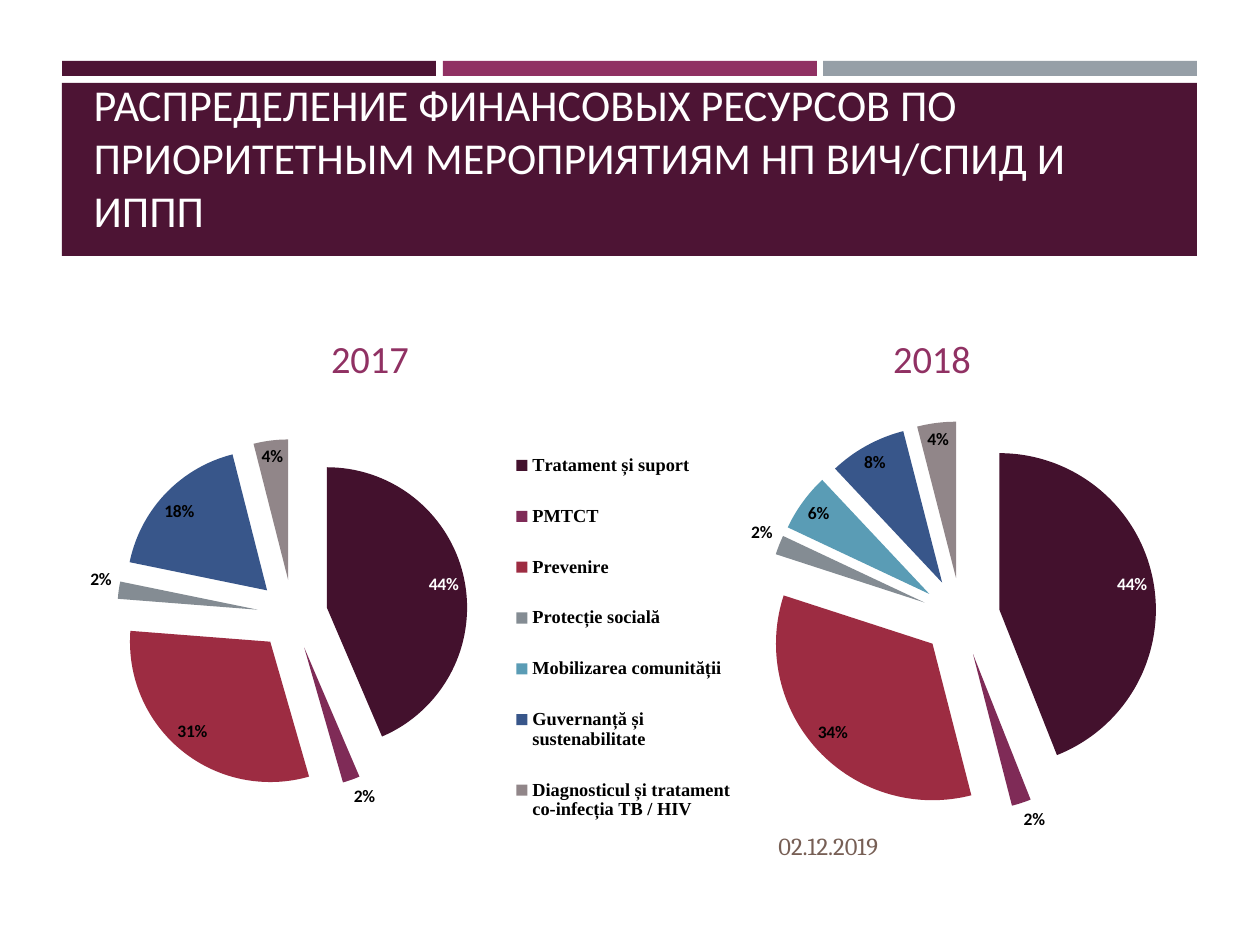
"""Build the slide that compares the 2017 and 2018 funding shares."""
from dataclasses import dataclass
from typing import Optional

import lxml.etree
import pptx
import pptx.chart.data
import pptx.dml.color
import pptx.enum.chart
import pptx.enum.shapes
import pptx.enum.text
import pptx.oxml.ns
import pptx.util

RGBColor = pptx.dml.color.RGBColor
Anchor = pptx.enum.text.MSO_ANCHOR
Align = pptx.enum.text.PP_ALIGN

EMU_PER_PX = 914400 / 126
PLUM = RGBColor(0x4D, 0x14, 0x34)
MAGENTA = RGBColor(0x90, 0x31, 0x63)
SILVER = RGBColor(0x96, 0x9F, 0xA7)
BROWN = RGBColor(0x77, 0x5F, 0x55)
WHITE = RGBColor(0xFF, 0xFF, 0xFF)
BLACK = RGBColor(0x00, 0x00, 0x00)
SLICE_COLORS = (
    RGBColor(0x43, 0x11, 0x2D),
    RGBColor(0x7F, 0x2B, 0x57),
    RGBColor(0x9D, 0x2C, 0x42),
    RGBColor(0x84, 0x8C, 0x93),
    RGBColor(0x5A, 0x9C, 0xB5),
    RGBColor(0x38, 0x56, 0x8A),
    RGBColor(0x91, 0x86, 0x89),
)
EXPLOSION = 25
TITLE = "РАСПРЕДЕЛЕНИЕ ФИНАНСОВЫХ РЕСУРСОВ ПО ПРИОРИТЕТНЫМ МЕРОПРИЯТИЯМ НП ВИЧ/СПИД И ИППП"


@dataclass(frozen=True)
class Box:
    """A rectangle in px."""
    left: int
    top: int
    width: int
    height: int

    def emu(self) -> tuple:
        """Return the four lengths in EMU."""
        return tuple(px(value) for value in (self.left, self.top, self.width, self.height))


@dataclass(frozen=True)
class Band:
    """A filled header rectangle."""
    box: Box
    color: RGBColor


@dataclass(frozen=True)
class Label:
    """A single-run text."""
    text: str
    box: Box
    font: str
    size: float
    color: RGBColor
    anchor: Anchor
    align: Align = Align.LEFT
    space_before: float = 0
    space_after: float = 0


@dataclass(frozen=True)
class Pie:
    """An exploded pie, with layouts as x, y, width and height fractions."""
    box: Box
    categories: tuple
    values: tuple
    plot_layout: tuple
    legend_layout: Optional[tuple] = None


BANDS = (
    Band(Box(62, 61, 374, 15), PLUM),
    Band(Box(443, 61, 374, 15), MAGENTA),
    Band(Box(823, 61, 374, 15), SILVER),
    Band(Box(62, 83, 1135, 173), PLUM),
)
TITLE_LABEL = Label(TITLE, Box(81, 94, 1101, 149), "Calibri", 25.2, WHITE, Anchor.BOTTOM)
LABELS = (
    Label("2017", Box(122, 307, 496, 80), "Calibri", 22, MAGENTA, Anchor.BOTTOM, Align.CENTER, 4.4, 6),
    Label("2018", Box(684, 307, 496, 80), "Calibri", 22, MAGENTA, Anchor.BOTTOM, Align.CENTER, 4.4, 6),
    Label("02.12.2019", Box(766, 820, 294, 51), "Cambria", 14, BROWN, Anchor.MIDDLE),
)
PIES = (
    Pie(
        Box(714, 378, 462, 483),
        ("1", "2", "3", "4", "5", "6", "7"),
        (44, 2, 34, 2, 6, 8, 4),
        (0.11, 0.09, 0.85, 0.81),
    ),
    Pie(
        Box(84, 368, 662, 514),
        (
            "Tratament și suport",
            "PMTCT",
            "Prevenire",
            "Protecție socială",
            "Mobilizarea comunității",
            "Guvernanță și sustenabilitate",
            "Diagnosticul și tratament co-infecția TB / HIV",
        ),
        (44, 2, 31, 2, 0, 18, 4),
        (0.05, 0.06, 0.53, 0.84),
        (0.64, 0.11, 0.35, 0.83),
    ),
)


def px(value: int) -> int:
    """Turn px into EMU."""
    return round(value * EMU_PER_PX)


def chart_element(tag: str, value: object = None) -> lxml.etree.ElementBase:
    """Make a chart element with an optional val attribute."""
    element = pptx.oxml.xmlchemy.OxmlElement(f"c:{tag}")
    if value is not None:
        element.set("val", str(value))
    return element


def manual_layout(fractions: tuple, inner: bool) -> lxml.etree.ElementBase:
    """Make a layout placed by fractions of the chart."""
    layout = chart_element("layout")
    manual = chart_element("manualLayout")
    layout.append(manual)
    if inner:
        manual.append(chart_element("layoutTarget", "inner"))
    for tag in ("xMode", "yMode"):
        manual.append(chart_element(tag, "edge"))
    for tag, fraction in zip("xywh", fractions):
        manual.append(chart_element(tag, fraction))
    return layout


def add_band(slide: pptx.slide.Slide, band: Band) -> None:
    """Draw one header rectangle."""
    shape = slide.shapes.add_shape(pptx.enum.shapes.MSO_SHAPE.RECTANGLE, *band.box.emu())
    shape.shadow.inherit = False
    shape.fill.solid()
    shape.fill.fore_color.rgb = band.color
    shape.line.fill.background()


def write_label(shape: pptx.shapes.autoshape.Shape, label: Label) -> None:
    """Place a text shape and write its run."""
    shape.left, shape.top, shape.width, shape.height = label.box.emu()
    frame = shape.text_frame
    frame.word_wrap = True
    frame.auto_size = pptx.enum.text.MSO_AUTO_SIZE.NONE
    frame.vertical_anchor = label.anchor
    paragraph = frame.paragraphs[0]
    paragraph.alignment = label.align
    paragraph.space_before = pptx.util.Pt(label.space_before)
    paragraph.space_after = pptx.util.Pt(label.space_after)
    run = paragraph.add_run()
    run.text = label.text
    style_font(run.font, label.font, label.size, label.color)


def style_font(font: pptx.text.text.Font, name: str, size: float, color: RGBColor, bold: bool = False) -> None:
    """Set the face, size, colour and weight of a font."""
    font.name = name
    font.size = pptx.util.Pt(size)
    font.color.rgb = color
    font.bold = bold


def add_pie(slide: pptx.slide.Slide, pie: Pie) -> None:
    """Draw one exploded pie with percent labels."""
    data = pptx.chart.data.CategoryChartData()
    data.categories = pie.categories
    data.add_series("Series 1", pie.values)
    chart = slide.shapes.add_chart(pptx.enum.chart.XL_CHART_TYPE.PIE, *pie.box.emu(), data).chart
    chart.has_title = False
    style_font(chart.font, "Calibri", 10, BLACK)
    chart.plots[0].vary_by_categories = True
    series = chart.plots[0].series[0]
    for index, color in enumerate(SLICE_COLORS):
        slice_format = series.points[index].format
        slice_format.fill.solid()
        slice_format.fill.fore_color.rgb = color
        slice_format.line.fill.background()
    series_element = series._element
    series_element.xpath("c:dPt")[0].addprevious(chart_element("explosion", EXPLOSION))
    best_fit = pptx.enum.chart.XL_LABEL_POSITION.BEST_FIT
    labels = series.data_labels
    labels.show_value = False
    labels.show_percentage = True
    labels.number_format = "0%"
    labels.number_format_is_linked = False
    labels.position = best_fit
    style_font(labels.font, "Calibri", 10, BLACK, True)
    first_label = series.points[0].data_label
    style_font(first_label.font, "Calibri", 10, WHITE, True)
    first_label.position = best_fit
    for tag, value in (("showVal", "0"), ("showPercent", "1")):
        series_element.xpath(f"c:dLbls/c:dLbl/c:{tag}")[0].set("val", value)
    plot_area = chart._chartSpace.xpath("c:chart/c:plotArea")[0]
    for layout in plot_area.xpath("c:layout"):
        plot_area.remove(layout)
    plot_area.insert(0, manual_layout(pie.plot_layout, True))
    chart.has_legend = pie.legend_layout is not None
    if pie.legend_layout:
        legend = chart.legend
        legend.position = pptx.enum.chart.XL_LEGEND_POSITION.RIGHT
        legend.include_in_layout = False
        style_font(legend.font, "Times New Roman", 10.5, BLACK, True)
        legend_element = legend._element
        for layout in legend_element.xpath("c:layout"):
            legend_element.remove(layout)
        legend_element.xpath("c:overlay")[0].addprevious(manual_layout(pie.legend_layout, False))


def main() -> None:
    """Build and save the presentation."""
    presentation = pptx.Presentation()
    presentation.slide_width = px(1260)
    presentation.slide_height = px(945)
    slide = presentation.slides.add_slide(presentation.slide_layouts[5])
    for band in BANDS:
        add_band(slide, band)
    title = slide.shapes.title
    slide.shapes._spTree.append(title._element)
    write_label(title, TITLE_LABEL)
    for label in LABELS:
        write_label(slide.shapes.add_textbox(*label.box.emu()), label)
    for pie in PIES:
        add_pie(slide, pie)
    presentation.save("out.pptx")


if __name__ == "__main__":
    main()
